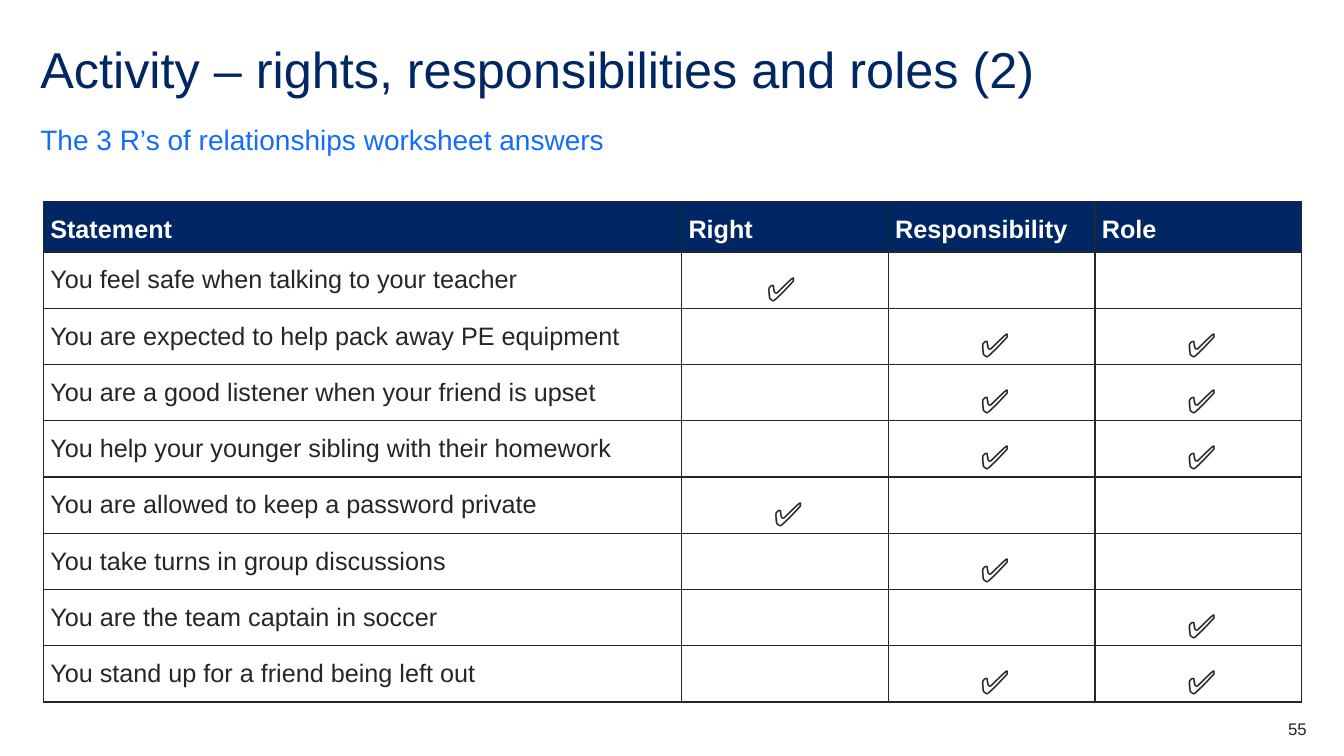
from dataclasses import dataclass

import pptx
import pptx.dml.color
import pptx.enum.text
import pptx.oxml
import pptx.oxml.ns
import pptx.util

ALIGN = pptx.enum.text.PP_ALIGN
ANCHOR = pptx.enum.text.MSO_ANCHOR
WIDTH, HEIGHT = pptx.util.Inches(13.33), pptx.util.Inches(7.5)


@dataclass(frozen=True)
class Theme:
    font: str = "Arial"
    navy: str = "002664"
    blue: str = "146CFD"
    ink: str = "22272B"
    white: str = "FFFFFF"
    title_size: int = 36
    subtitle_size: int = 20
    table_size: int = 18
    tick_size: int = 24
    number_size: int = 12
    border_width: int = 1


@dataclass(frozen=True)
class Box:
    left: float
    top: float
    width: float
    height: float


@dataclass(frozen=True)
class Statement:
    text: str
    ticks: tuple[str, ...]
    tick_shift: float = 0.07


THEME = Theme()
TITLE_BOX = Box(3, 6, 94, 6.53)
SUBTITLE_BOX = Box(3, 16.4, 78.25, 4.27)
TABLE_BOX = Box(3.22, 26.67, 93.63, 60.93)
NUMBER_BOX = Box(91.3, 95.07, 5.93, 2.67)
STATEMENT_WIDTH, CATEGORY_WIDTH = 47.49, 15.38
HEADER_HEIGHT, ROW_HEIGHT = 6.53, 6.8
SIDE_MARGIN = 0.07
CATEGORIES = ("Right", "Responsibility", "Role")
STATEMENTS = (
    Statement("You feel safe when talking to your teacher", ("Right",), -0.07),
    Statement("You are expected to help pack away PE equipment", ("Responsibility", "Role")),
    Statement("You are a good listener when your friend is upset", ("Responsibility", "Role")),
    Statement("You help your younger sibling with their homework", ("Responsibility", "Role")),
    Statement("You are allowed to keep a password private", ("Right",)),
    Statement("You take turns in group discussions", ("Responsibility",)),
    Statement("You are the team captain in soccer", ("Role",)),
    Statement("You stand up for a friend being left out", ("Responsibility", "Role")),
)


def across(percent: float) -> int:
    return round(WIDTH * percent / 100)


def down(percent: float) -> int:
    return round(HEIGHT * percent / 100)


def place(box: Box) -> tuple[int, int, int, int]:
    return across(box.left), down(box.top), across(box.width), down(box.height)


def write(frame, text: str, *, size: int, color: str, bold: bool = False,
          align=ALIGN.LEFT, line: float = 1.0, before: int = 0, after: int = 0) -> None:
    paragraph = frame.paragraphs[0]
    paragraph.alignment = align
    paragraph.line_spacing = line
    paragraph.space_before = pptx.util.Pt(before)
    paragraph.space_after = pptx.util.Pt(after)
    run = paragraph.add_run()
    run.text = text
    run.font.name = THEME.font
    run.font.size = pptx.util.Pt(size)
    run.font.bold = bold
    run.font.color.rgb = pptx.dml.color.RGBColor.from_string(color)


def fit(shape, box: Box, anchor=ANCHOR.TOP):
    shape.left, shape.top, shape.width, shape.height = place(box)
    frame = shape.text_frame
    frame.margin_left = frame.margin_right = frame.margin_top = frame.margin_bottom = 0
    frame.word_wrap = True
    frame.auto_size = pptx.enum.text.MSO_AUTO_SIZE.NONE
    frame.vertical_anchor = anchor
    return frame


def remove_bullet(paragraph) -> None:
    properties = paragraph._p.get_or_add_pPr()
    properties.set("marL", "0")
    properties.set("indent", "0")
    properties.append(pptx.oxml.parse_xml(f'<a:buNone {pptx.oxml.ns.nsdecls("a")}/>'))


def style_cell(cell, fill: str | None = None, bottom: float = 0, shift: float = 0) -> None:
    properties = cell._tc.get_or_add_tcPr()
    for side in ("lnL", "lnR", "lnT", "lnB"):
        properties.append(pptx.oxml.parse_xml(
            f'<a:{side} {pptx.oxml.ns.nsdecls("a")} w="{pptx.util.Pt(THEME.border_width)}">'
            f'<a:solidFill><a:srgbClr val="{THEME.ink}"/></a:solidFill></a:{side}>'))
    if fill:
        cell.fill.solid()
        cell.fill.fore_color.rgb = pptx.dml.color.RGBColor.from_string(fill)
    else:
        cell.fill.background()
    cell.margin_left = pptx.util.Inches(SIDE_MARGIN + max(shift, 0))
    cell.margin_right = pptx.util.Inches(SIDE_MARGIN + max(-shift, 0))
    cell.margin_top = 0
    cell.margin_bottom = pptx.util.Inches(bottom)


def add_answers(slide) -> None:
    table = slide.shapes.add_table(
        len(STATEMENTS) + 1, len(CATEGORIES) + 1, *place(TABLE_BOX)).table
    table.horz_banding = False
    for index, column in enumerate(table.columns):
        column.width = across(CATEGORY_WIDTH if index else STATEMENT_WIDTH)
    for index, row in enumerate(table.rows):
        row.height = down(ROW_HEIGHT if index else HEADER_HEIGHT)

    for index, heading in enumerate(("Statement", *CATEGORIES)):
        cell = table.cell(0, index)
        style_cell(cell, fill=THEME.navy, bottom=0.08)
        write(cell.text_frame, heading, size=THEME.table_size, color=THEME.white,
              bold=True, line=1.5, before=12, after=6)

    for row, statement in enumerate(STATEMENTS, start=1):
        cell = table.cell(row, 0)
        style_cell(cell)
        write(cell.text_frame, statement.text, size=THEME.table_size, color=THEME.ink,
              line=1.5, before=6, after=6)
        for column, category in enumerate(CATEGORIES, start=1):
            cell = table.cell(row, column)
            style_cell(cell, shift=statement.tick_shift)
            if category in statement.ticks:
                write(cell.text_frame, "✅", size=THEME.tick_size, color=THEME.ink,
                      align=ALIGN.CENTER, line=1.5, before=12, after=6)


def main() -> None:
    presentation = pptx.Presentation()
    presentation.slide_width, presentation.slide_height = WIDTH, HEIGHT
    slide = presentation.slides.add_slide(presentation.slide_layouts[1])

    write(fit(slide.shapes.title, TITLE_BOX),
          "Activity – rights, responsibilities and roles (2)",
          size=THEME.title_size, color=THEME.navy, line=0.9)
    subtitle = fit(slide.placeholders[1], SUBTITLE_BOX, ANCHOR.BOTTOM)
    write(subtitle, "The 3 R’s of relationships worksheet answers",
          size=THEME.subtitle_size, color=THEME.blue, line=1.5, after=12)
    remove_bullet(subtitle.paragraphs[0])
    add_answers(slide)
    number = slide.shapes.add_textbox(*place(NUMBER_BOX))
    write(fit(number, NUMBER_BOX), "55", size=THEME.number_size, color=THEME.ink,
          align=ALIGN.RIGHT)

    presentation.save("out.pptx")


if __name__ == "__main__":
    main()
